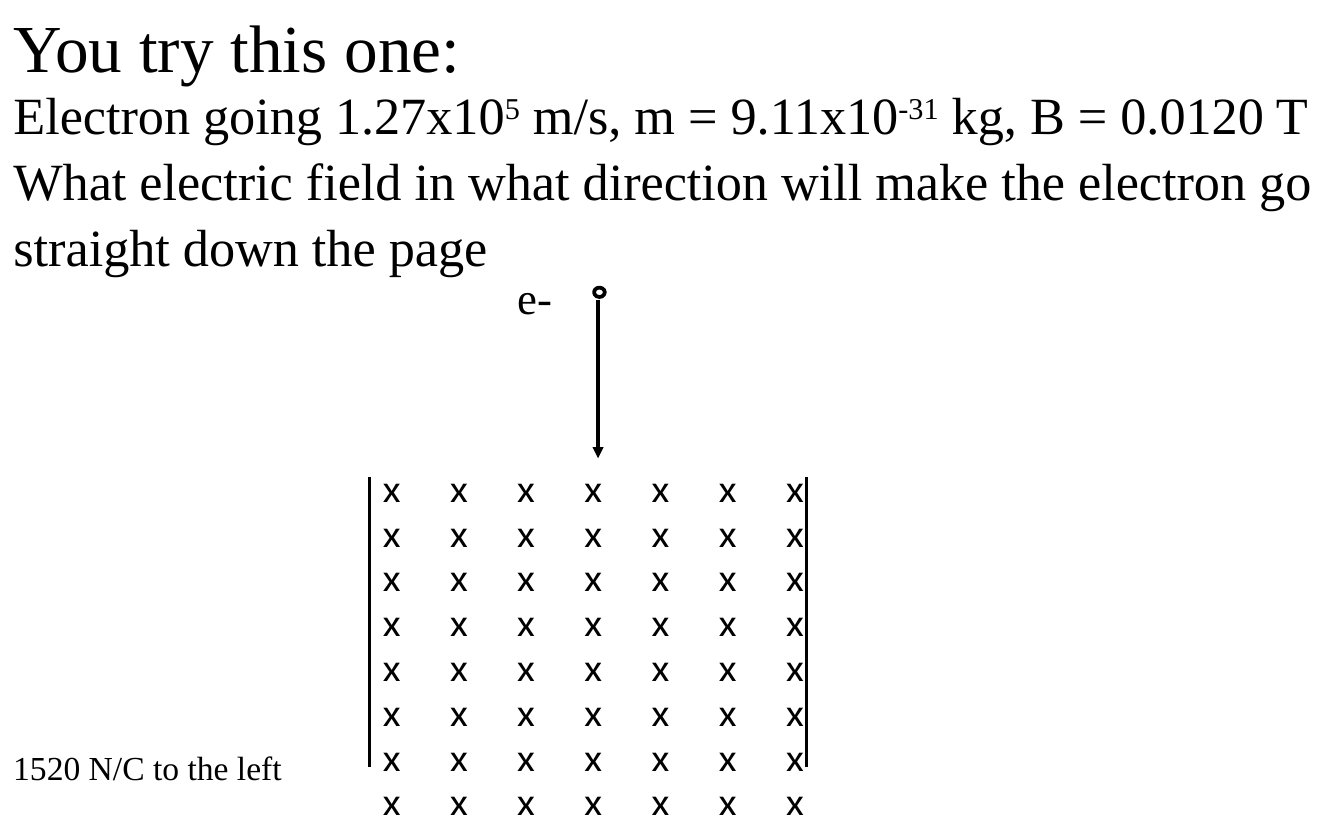
"""Build the slide posing an electron problem in crossed electric and magnetic fields."""
from lxml import etree
from pptx import Presentation
from pptx import util as u
from pptx.dml.color import RGBColor
from pptx.enum import shapes, text
from pptx.oxml.ns import qn

COLORS = {"ink": "000000", "paper": "FFFFFF"}
SERIF, SANS = "Times New Roman", "Cabin"
HEADING = [[("You try this one:", 0)]]
PROBLEM = [
    [("Electron going 1.27x10", 0), ("5", 30), (" m/s, m = 9.11x10", 0),
     ("-31", 30), (" kg, B = 0.0120 T", 0)],
    [("What electric field in what direction will make the electron go "
      "straight down the page", 0)],
]
CHARGE = [[("e-", 0)]]
ANSWER = [[("1520 N/C to the left", 0)]]
FIELD_ROWS, FIELD_COLUMNS, FIELD_STEP = 8, 7, 0.38
FIELD = [[("\t".join("x" * FIELD_COLUMNS), 0)]] * FIELD_ROWS
PLATE_XS, PLATE_TOP, PLATE_BOTTOM = (2.75, 6), 3.55, 5.71
PATH = (4.45, 2.23, 4.45, 3.41)
ELECTRON = (4.42, 2.14, 0.08, 0.07)


def ink(color_format):
    color_format.rgb = RGBColor.from_string(COLORS["ink"])


def place(shape, box):
    for name, value in zip(("left", "top", "width", "height"), box):
        setattr(shape, name, u.Inches(value))


def write(shape, paragraphs, size, font=SERIF, tabs=(), spacing=1.0, **frame_format):
    frame = shape.text_frame
    settings = {"word_wrap": True, "auto_size": text.MSO_AUTO_SIZE.NONE,
                "vertical_anchor": text.MSO_ANCHOR.TOP,
                "margin_left": u.Inches(0.1), "margin_right": 0,
                "margin_top": u.Inches(0.05), "margin_bottom": 0, **frame_format}
    for name, value in settings.items():
        setattr(frame, name, value)
    for index, runs in enumerate(paragraphs):
        line = frame.add_paragraph() if index else frame.paragraphs[0]
        for name, value in {"alignment": text.PP_ALIGN.LEFT, "space_before": u.Pt(0),
                            "line_spacing": spacing}.items():
            setattr(line, name, value)
        properties = line._p.get_or_add_pPr()
        properties.set("marL", "0")
        properties.set("indent", "0")
        etree.SubElement(properties, qn("a:buNone"))
        if tabs:
            stops = etree.SubElement(properties, qn("a:tabLst"))
            for stop in tabs:
                etree.SubElement(stops, qn("a:tab"), pos=str(u.Inches(stop)), algn="l")
        for words, raised in runs:
            run = line.add_run()
            run.text = words
            for name, value in {"size": u.Pt(size), "name": font}.items():
                setattr(run.font, name, value)
            ink(run.font.color)
            if raised:
                run.font._element.set("baseline", str(raised * 1000))


def draw_line(slide, start_x, start_y, end_x, end_y, arrow=False):
    line = slide.shapes.add_connector(
        shapes.MSO_CONNECTOR.STRAIGHT, *map(u.Inches, (start_x, start_y, end_x, end_y)))
    ink(line.line.color)
    line.line.width = u.Pt(2)
    if arrow:
        etree.SubElement(line.line._get_or_add_ln(), qn("a:tailEnd"), type="triangle")
    etree.SubElement(line._element.spPr, qn("a:effectLst"))


def main():
    deck = Presentation()
    deck.slide_width, deck.slide_height = u.Inches(10), u.Inches(6.25)
    slide = deck.slides.add_slide(deck.slide_layouts[1])
    slide.background.fill.solid()
    slide.background.fill.fore_color.rgb = RGBColor.from_string(COLORS["paper"])

    heading, problem = slide.placeholders
    place(heading, (0, -0.04, 9.92, 0.63))
    write(heading, HEADING, 36, spacing=1.05)
    place(problem, (0, 0.59, 9.92, 1.49))
    write(problem, PROBLEM, 28, spacing=1.05, margin_top=0)

    electron = slide.shapes.add_shape(shapes.MSO_SHAPE.OVAL, *map(u.Inches, ELECTRON))
    electron.shadow.inherit = False
    electron.fill.background()
    ink(electron.line.color)
    electron.line.width = u.Pt(2)
    draw_line(slide, *PATH, arrow=True)

    stops = [FIELD_STEP * column for column in range(1, FIELD_COLUMNS)]
    for box, words, size, options in (
        ((3.75, 1.96, 0.46, 0.5), CHARGE, 24, {}),
        ((2.75, 3.41, 3.28, 2.79), FIELD, 20, {"font": SANS, "tabs": stops}),
        ((0, 5.51, 2.22, 0.4), ANSWER, 18, {}),
    ):
        write(slide.shapes.add_textbox(*map(u.Inches, box)), words, size, **options)

    for x in PLATE_XS:
        draw_line(slide, x, PLATE_TOP, x, PLATE_BOTTOM)
    deck.save("out.pptx")


if __name__ == "__main__":
    main()
